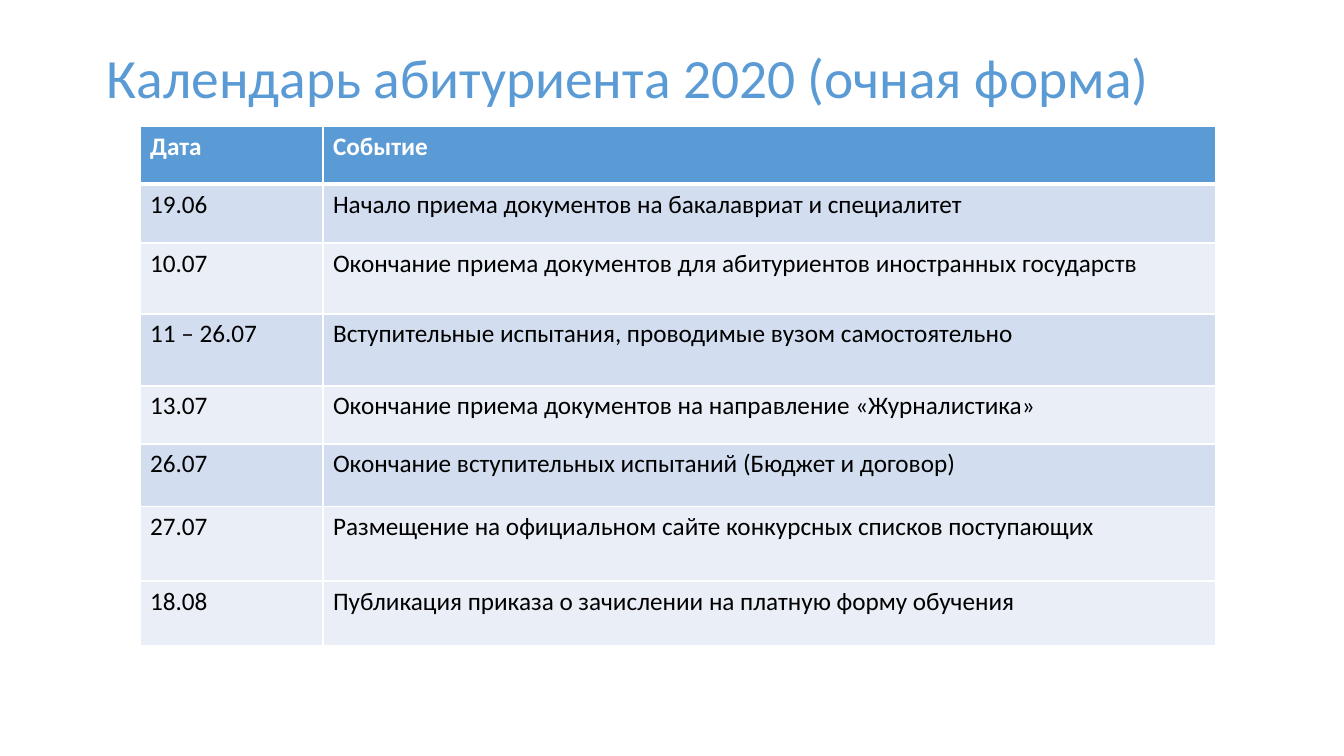
"""Build the 2020 applicant calendar slide with its title and two stacked tables."""
from lxml import etree
from pptx import Presentation, util as u
from pptx.dml.color import RGBColor
from pptx.enum import text
from pptx.oxml.ns import qn

SCALE = 914400 / 100.8
BLUE, WHITE, BLACK = "5B9BD5", "FFFFFF", "000000"
DARK_BAND, LIGHT_BAND = "D2DEEF", "EAEFF7"
LEFT, TOP = 140, 126
COLUMNS = (183, 893)


def px(length):
    return u.Emu(round(length * SCALE))


def add_span(para, wording, size, color, bold=False):
    span = para.add_run()
    span.text = wording
    span.font.name = "Calibri"
    span.font.size = u.Pt(size)
    span.font.bold = bold
    span.font.color.rgb = RGBColor.from_string(color)


deck = Presentation()
deck.slide_width, deck.slide_height = px(1344), px(756)
page = deck.slides.add_slide(deck.slide_layouts[6])

title = page.shapes.add_textbox(px(97), px(36), px(1142), px(90))
title.text_frame.word_wrap = True
title.text_frame.vertical_anchor = text.MSO_ANCHOR.MIDDLE
title_para = title.text_frame.paragraphs[0]
title_para.line_spacing = 0.9
add_span(title_para, "Календарь абитуриента 2020 (очная форма)", 39.6, BLUE)

calendar = [
    (58, BLUE, "Дата", "Событие"),
    (59, DARK_BAND, "19.06", "Начало приема документов на бакалавриат и специалитет"),
    (71, LIGHT_BAND, "10.07", "Окончание приема документов для абитуриентов иностранных государств"),
    (72, DARK_BAND, "11 – 26.07", "Вступительные испытания, проводимые вузом самостоятельно"),
    (58, LIGHT_BAND, "13.07", "Окончание приема документов на направление «Журналистика»"),
    (63, DARK_BAND, "26.07", "Окончание вступительных испытаний (Бюджет и договор)"),
    (74, LIGHT_BAND, "27.07", "Размещение на официальном сайте конкурсных списков поступающих"),
]
enrolment = [
    (65, LIGHT_BAND, "18.08", "Публикация приказа о зачислении на платную форму обучения"),
]

top = TOP
for entries in (calendar, enrolment):
    height = sum(entry[0] for entry in entries)
    frame = page.shapes.add_table(
        len(entries), len(COLUMNS), px(LEFT), px(top), px(sum(COLUMNS)), px(height))
    table = frame.table
    table.first_row = table.horz_banding = False
    for column, width in zip(table.columns, COLUMNS):
        column.width = px(width)
    for index, (row_height, fill, *wordings) in enumerate(entries):
        table.rows[index].height = px(row_height)
        header = fill == BLUE
        below_header = index == 1
        widths = {"lnL": 1, "lnR": 1, "lnT": 3 if below_header else 1, "lnB": 3 if header else 1}
        for cell, wording in zip(table.rows[index].cells, wordings):
            cell.fill.solid()
            cell.fill.fore_color.rgb = RGBColor.from_string(fill)
            add_span(cell.text_frame.paragraphs[0], wording, 18, WHITE if header else BLACK, header)
            properties = cell._tc.get_or_add_tcPr()
            for place, (side, points) in enumerate(widths.items()):
                line = etree.Element(qn(f"a:{side}"), w=str(u.Pt(points)))
                solid = etree.SubElement(line, qn("a:solidFill"))
                etree.SubElement(solid, qn("a:srgbClr"), val=WHITE)
                properties.insert(place, line)
    top += height

deck.save("out.pptx")
